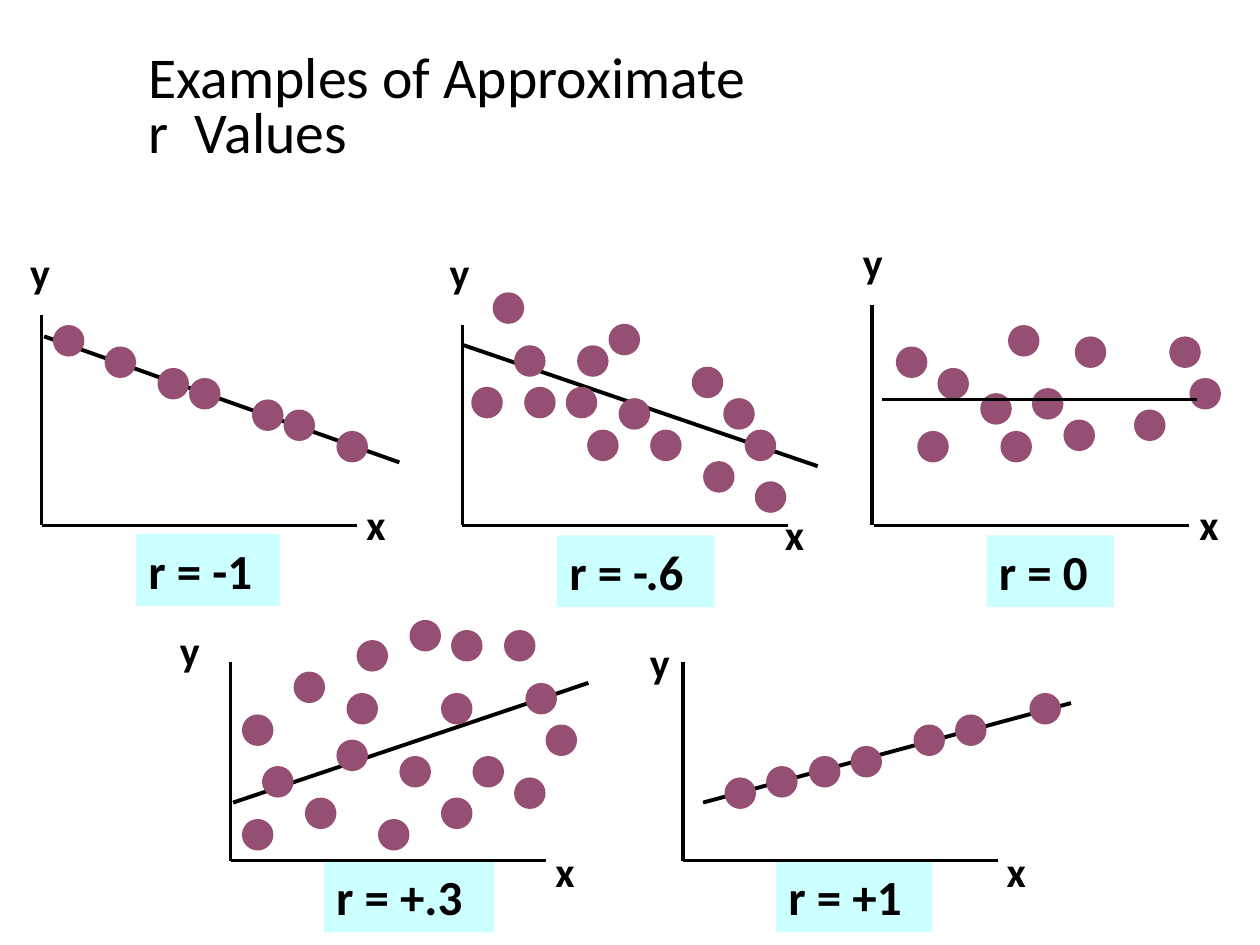
from dataclasses import dataclass

from lxml.etree import SubElement
from pptx import Presentation
from pptx.dml.color import RGBColor
from pptx.enum.shapes import MSO_CONNECTOR as Link, MSO_SHAPE as Shape
from pptx.enum.text import MSO_ANCHOR as Anchor, MSO_AUTO_SIZE as Fit, PP_ALIGN as Align
from pptx.oxml.ns import qn
from pptx.util import Pt

PX = 9144  # 100 px to the inch
DOT = 25
BLACK = RGBColor(0x00, 0x00, 0x00)
CYAN = RGBColor(0xCC, 0xFF, 0xFF)
PLUM = RGBColor(0x95, 0x4F, 0x72)
TITLE = {"name": "Calibri", "size": Pt(33), "bold": False}
AXIS = {"name": "Calibri", "size": Pt(24), "bold": True}
LABEL = {"name": "Calibri", "size": Pt(28), "bold": True}


@dataclass
class Plot:
    label: str
    box: tuple    # left, top, width of the label
    y_at: tuple   # left, top of the letter
    x_at: tuple
    y_axis: tuple  # x1, y1, x2, y2
    x_axis: tuple
    trend: tuple
    dots: list    # left, top of each dot
    weight: float = 2.25
    over: bool = False  # trend line in front of the dots


PLOTS = [
    Plot("r = -1", (108, 424, 114), (14, 191), (281, 391),
         (33, 250, 33, 417), (33, 417, 283, 417), (317, 367, 35, 267),
         [(42, 258), (83, 275), (125, 292), (150, 300), (200, 317),
          (225, 325), (267, 342)]),
    Plot("r = -.6", (442, 425, 125), (347, 191), (613, 399),
         (367, 258, 367, 417), (367, 417, 625, 417), (649, 370, 368, 274),
         [(374, 307), (391, 232), (408, 274), (416, 307), (449, 307),
          (458, 274), (466, 341), (483, 257), (491, 316), (516, 341),
          (549, 291), (558, 366), (574, 316), (591, 341), (599, 382)]),
    Plot("r = 0", (783, 425, 101), (675, 183), (942, 391),
         (692, 242, 692, 417), (694, 417, 944, 417), (700, 317, 950, 317),
         [(711, 275), (728, 342), (744, 292), (778, 312), (794, 342),
          (800, 258), (819, 308), (844, 333), (853, 267), (900, 325),
          (928, 267), (944, 300)], weight=2, over=True),
    Plot("r = +.3", (257, 683, 135), (133, 491), (431, 666),
         (183, 525, 183, 683), (183, 683, 433, 683), (185, 637, 467, 542),
         [(192, 567), (192, 650), (208, 608), (233, 533), (242, 633),
          (267, 587), (275, 550), (283, 508), (300, 650), (317, 600),
          (325, 492), (350, 550), (350, 633), (358, 500), (375, 600),
          (400, 500), (408, 617), (417, 542), (433, 575)]),
    Plot("r = +1", (616, 683, 124), (506, 500), (789, 666),
         (542, 525, 542, 683), (542, 683, 792, 683), (558, 637, 850, 558),
         [(575, 617), (608, 608), (642, 600), (675, 592), (725, 575),
          (758, 567), (817, 550)]),
]


def emu(*vals):
    return [val * PX for val in vals]


def style(font, form):
    for key, val in form.items():
        setattr(font, key, val)
    font.color.rgb = BLACK


def add_title(slide, lines):
    title = slide.shapes.title
    title.left, title.top, title.width, title.height = emu(108, 33, 852, 108)
    frame = title.text_frame
    frame.vertical_anchor = Anchor.MIDDLE
    frame.auto_size = Fit.NONE
    para = frame.paragraphs[0]
    para.alignment = Align.LEFT
    para.line_spacing = 0.8
    for num, line in enumerate(lines):
        if num:
            para.add_line_break()
        run = para.add_run()
        run.text = line
        style(run.font, TITLE)


def add_text(slide, text, at, form, fill=None):
    box = slide.shapes.add_textbox(*emu(*at))
    if fill is not None:
        box.fill.solid()
        box.fill.fore_color.rgb = fill
    frame = box.text_frame
    frame.word_wrap = True
    frame.auto_size = Fit.NONE
    run = frame.paragraphs[0].add_run()
    run.text = text
    style(run.font, form)


def add_line(slide, ends, weight=2):
    line = slide.shapes.add_connector(Link.STRAIGHT, *emu(*ends))
    line.line.color.rgb = BLACK
    line.line.width = Pt(weight)
    SubElement(line._element.spPr, qn("a:effectLst"))


def add_dot(slide, left, top):
    dot = slide.shapes.add_shape(Shape.OVAL, *emu(left, top, DOT, DOT))
    dot.shadow.inherit = False
    dot.fill.solid()
    dot.fill.fore_color.rgb = PLUM
    dot.line.fill.background()


def add_plot(slide, plot):
    add_text(slide, plot.label, (*plot.box, 57), LABEL, CYAN)
    for axis in (plot.y_axis, plot.x_axis):
        add_line(slide, axis)
    if not plot.over:
        add_line(slide, plot.trend, plot.weight)
    for dot in plot.dots:
        add_dot(slide, *dot)
    if plot.over:
        add_line(slide, plot.trend, plot.weight)
    for name, at in (("y", plot.y_at), ("x", plot.x_at)):
        add_text(slide, name, (*at, 39, 50), AXIS)


def main():
    deck = Presentation()
    deck.slide_width, deck.slide_height = emu(1000, 750)
    slide = deck.slides.add_slide(deck.slide_layouts[5])
    add_title(slide, ["Examples of Approximate ", "r  Values"])
    for plot in PLOTS:
        add_plot(slide, plot)
    deck.save("out.pptx")


if __name__ == "__main__":
    main()
